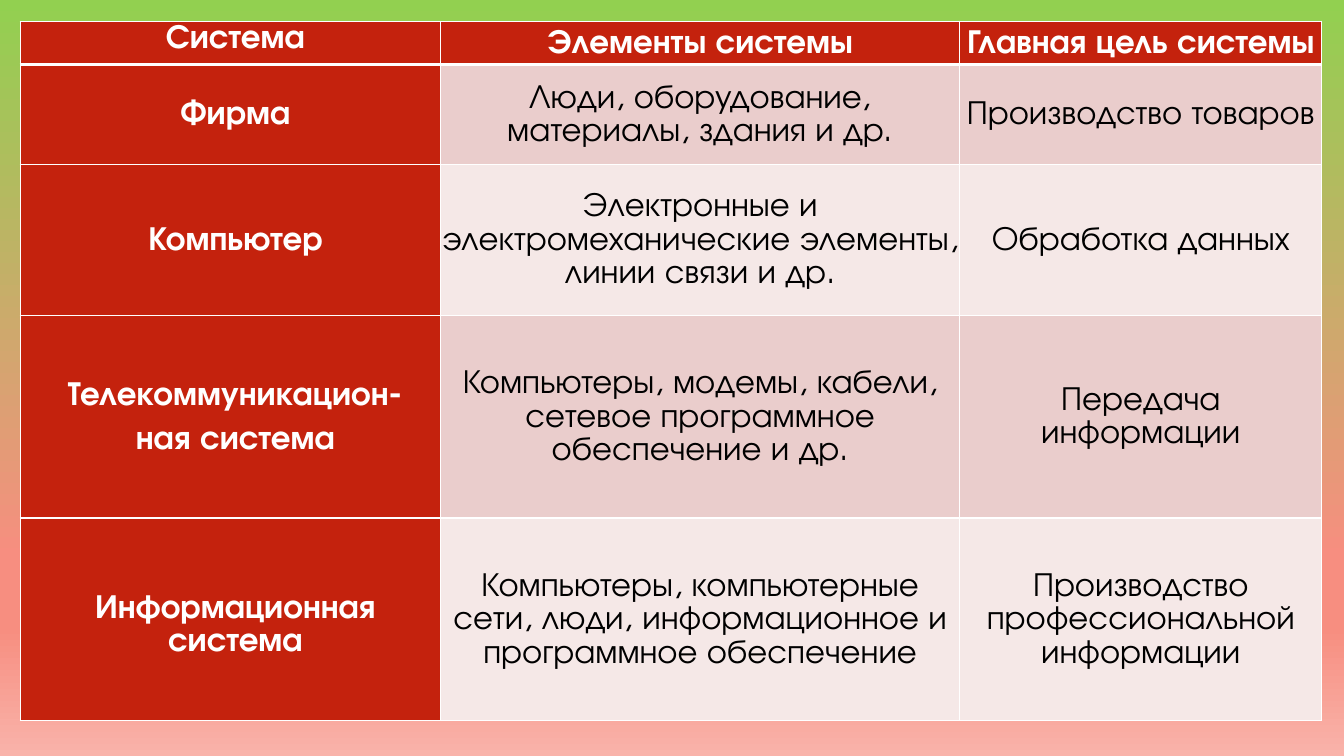
from lxml.etree import SubElement
from pptx import Presentation
from pptx.dml.color import RGBColor
from pptx.enum.text import MSO_ANCHOR, PP_ALIGN
from pptx.oxml.ns import qn
from pptx.util import Inches, Pt

FONT = "TeX Gyre Adventor"
COLORS = {
    "header": "C4220D",
    "band_dark": "EACDCC",
    "band_light": "F5E8E7",
    "white": "FFFFFF",
    "black": "000000",
}
BACKGROUND_STOPS = [(0, "92D050"), (74, "F78E80"), (83, "F78E80"), (100, "F9B3AA")]

COLUMN_WIDTHS = [4.17, 5.15, 3.59]
ROW_HEIGHTS = [0.4, 0.99, 1.5, 2.01, 2.01]
ROWS = [
    ("Система", "Элементы системы", "Главная цель системы"),
    ("Фирма", "Люди, оборудование, материалы, здания и др.", "Производство товаров"),
    ("Компьютер", "Электронные и электромеханические элементы, линии связи и др.",
     "Обработка данных"),
    ("Телекоммуникацион-\nная система",
     "Компьютеры, модемы, кабели, сетевое программное обеспечение и др.",
     "Передача информации"),
    ("Информационная система",
     "Компьютеры, компьютерные сети, люди, информационное и программное обеспечение",
     "Производство профессиональной информации"),
]


def paint_background(slide):
    fill = slide.background.fill
    fill.gradient()
    fill.gradient_angle = 270
    stop_list = next(slide.element.iter(qn("a:gsLst")))
    for stop in list(stop_list):
        stop_list.remove(stop)
    for percent, color in BACKGROUND_STOPS:
        stop = SubElement(stop_list, qn("a:gs"), pos=str(percent * 1000))
        SubElement(stop, qn("a:srgbClr"), val=color)


def set_borders(cell, top, bottom):
    """Draw white borders; top and bottom are widths in points."""
    properties = cell._tc.get_or_add_tcPr()
    for side, width in (("L", 1), ("R", 1), ("T", top), ("B", bottom)):
        line = SubElement(properties, qn(f"a:ln{side}"), w=str(Pt(width)))
        color_fill = SubElement(line, qn("a:solidFill"))
        SubElement(color_fill, qn("a:srgbClr"), val=COLORS["white"])


def set_margins(cell, row, column):
    is_name = column == 0
    last_row = len(ROWS) - 1
    cell.margin_left = Inches(0.1 if is_name else 0)
    cell.margin_top = Inches(0.1 if is_name and row > 0 else 0)
    cell.margin_right = 0
    cell.margin_bottom = Inches(0.1 if is_name and row < last_row else 0)


def write_cell(cell, text, color, bold):
    cell.vertical_anchor = MSO_ANCHOR.MIDDLE
    frame = cell.text_frame
    for index, line in enumerate(text.split("\n")):
        paragraph = frame.add_paragraph() if index else frame.paragraphs[0]
        paragraph.alignment = PP_ALIGN.CENTER
        paragraph.line_spacing = 1.07
        paragraph.space_after = Pt(7.5)
        run = paragraph.add_run()
        run.text = line
        run.font.name = FONT
        run.font.size = Pt(24)
        run.font.bold = bold
        run.font.color.rgb = RGBColor.from_string(color)


def add_systems_table(slide, left, top):
    table = slide.shapes.add_table(
        len(ROWS), len(COLUMN_WIDTHS), Inches(left), Inches(top),
        Inches(sum(COLUMN_WIDTHS)), Inches(sum(ROW_HEIGHTS))).table
    table.first_col = True
    for column, width in zip(table.columns, COLUMN_WIDTHS):
        column.width = Inches(width)
    for row, height in zip(table.rows, ROW_HEIGHTS):
        row.height = Inches(height)

    for row, texts in enumerate(ROWS):
        band = COLORS["band_dark" if row % 2 else "band_light"]
        for column, text in enumerate(texts):
            cell = table.cell(row, column)
            is_heading = row == 0 or column == 0
            set_borders(cell, top=3 if row == 1 else 1, bottom=3 if row == 0 else 1)
            set_margins(cell, row, column)
            cell.fill.solid()
            cell.fill.fore_color.rgb = RGBColor.from_string(
                COLORS["header"] if is_heading else band)
            write_cell(cell, text, COLORS["white" if is_heading else "black"], is_heading)


def main():
    presentation = Presentation()
    presentation.slide_width = Inches(13.33)
    presentation.slide_height = Inches(7.5)
    slide = presentation.slides.add_slide(presentation.slide_layouts[6])
    paint_background(slide)
    add_systems_table(slide, left=0.2, top=0.21)
    presentation.save("out.pptx")


if __name__ == "__main__":
    main()
